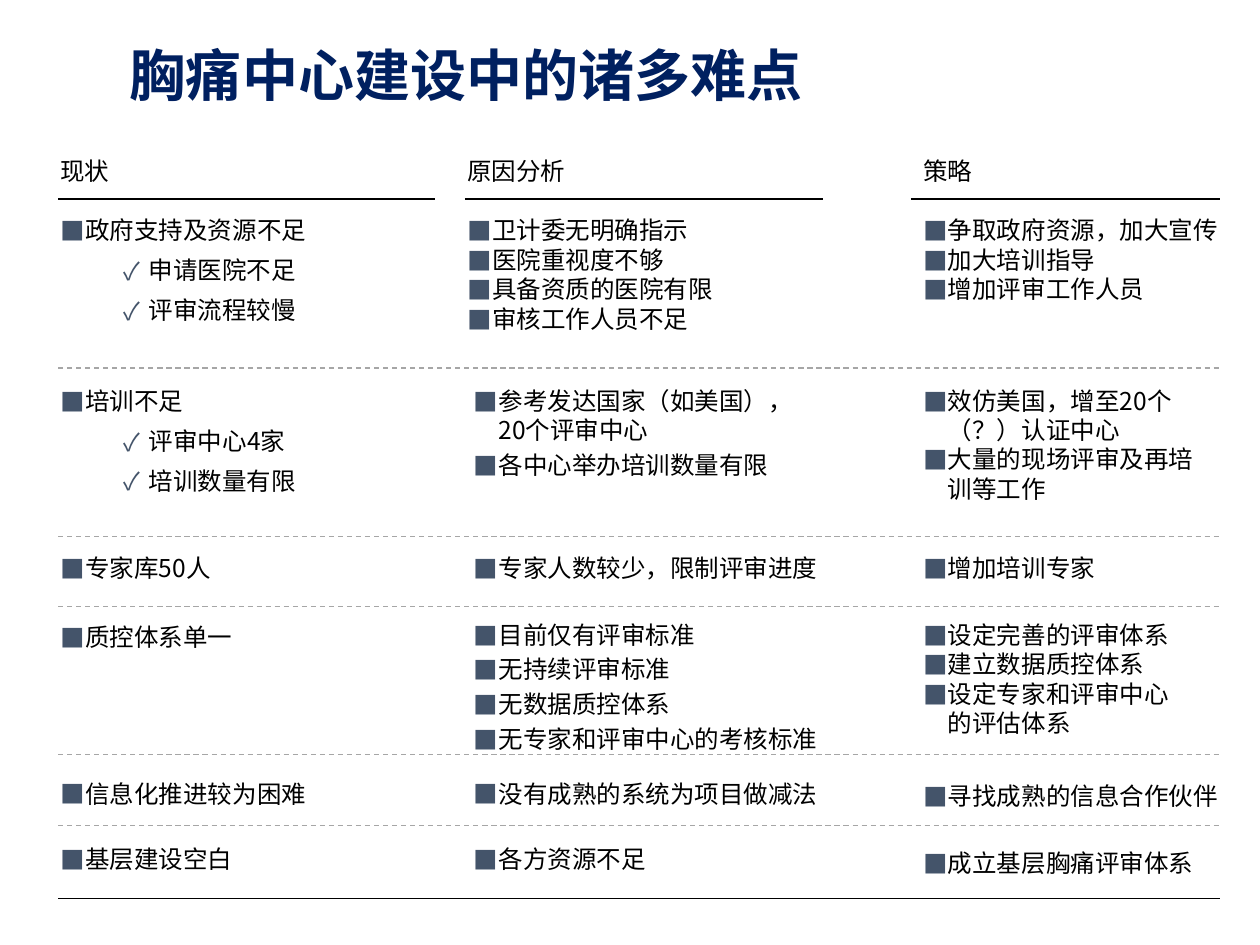
import pptx
import pptx.util
import pptx.dml.color
import pptx.enum.dml
import pptx.enum.shapes
import pptx.enum.text
import pptx.oxml.ns
import lxml.etree

Cm, Pt = pptx.util.Cm, pptx.util.Pt
FONT = "Noto Sans CJK SC"
HUES = {"title": "002060", "text": "000000", "mark": "44546A",
        "rule": "A6A6A6", "white": "FFFFFF"}
TITLE = " 胸痛中心建设中的诸多难点"

# left, width, text
HEADS = [(0.97, 5.59, "现状"), (9.17, 6.91, "原因分析"), (18.36, 5.59, "策略")]

# Each column: left, then cells of (top, width, height, space before, lines).
# A line that starts with "-" is a checked sub-item.
COLS = [
    (0.97, [
        (4.22, 5.59, 2.49, 6, ["政府支持及资源不足", "-申请医院不足", "-评审流程较慢"]),
        (7.65, 5.59, 2.49, 6, ["培训不足", "-评审中心4家", "-培训数量有限"]),
        (11.02, 5.59, 0.86, 6, ["专家库50人"]),
        (12.42, 5.59, 0.86, 6, ["质控体系单一"]),
        (15.57, 5.59, 0.86, 6, ["信息化推进较为困难"]),
        (16.89, 5.59, 0.86, 6, ["基层建设空白"]),
    ]),
    (9.17, [
        (4.22, 8.61, 3.25, 0, ["卫计委无明确指示", "医院重视度不够",
                               "具备资质的医院有限", "审核工作人员不足"]),
    ]),
    (9.3, [
        (7.65, 7.47, 2.16, 3, ["参考发达国家（如美国），20个评审中心",
                               "各中心举办培训数量有限"]),
        (11.02, 8.69, 0.86, 3, ["专家人数较少，限制评审进度"]),
        (12.37, 8.69, 2.97, 3, ["目前仅有评审标准", "无持续评审标准",
                                "无数据质控体系", "无专家和评审中心的考核标准"]),
        (15.57, 8.69, 0.86, 3, ["没有成熟的系统为项目做减法"]),
        (16.89, 8.69, 0.86, 3, ["各方资源不足"]),
    ]),
    (18.36, [
        (4.22, 7.11, 2.64, 0, ["争取政府资源，加大宣传", "加大培训指导", "增加评审工作人员"]),
        (7.65, 6.2, 2.64, 0, ["效仿美国，增至20个（？）认证中心",
                              "大量的现场评审及再培训等工作"]),
        (11.02, 8.69, 0.86, 3, ["增加培训专家"]),
        (12.37, 5.59, 2.64, 0, ["设定完善的评审体系", "建立数据质控体系",
                                "设定专家和评审中心的评估体系"]),
        (15.62, 8.69, 0.86, 3, ["寻找成熟的信息合作伙伴"]),
    ]),
]
LAST = (16.97, 6.48, 0.86, 3, ["成立基层胸痛评审体系"])

LEFT, RIGHT = 1.17, 24.59
HEAD_Y, END_Y = 4.01, 18.11
HEAD_RULES = [(LEFT, 8.76), (9.37, 16.59), (18.36, RIGHT)]
ROW_RULES = [7.42, 10.82, 12.22, 15.21, 16.64]


def tint(name):
    return pptx.dml.color.RGBColor.from_string(HUES[name])


def add_sub(node, tag, **attrs):
    return lxml.etree.SubElement(node, pptx.oxml.ns.qn(tag), **attrs)


def write(para, text, size=14, hue="text", bold=False, mark=None, indent=0.5, gap=0):
    """Fill one paragraph, with a hanging indent and an optional bullet."""
    props = para._p.get_or_add_pPr()
    props.set("marL", str(Cm(indent)))
    props.set("indent", str(-Cm(0.5) if indent else 0))
    if mark:
        add_sub(add_sub(props, "a:buClr"), "a:srgbClr", val=HUES["mark"])
        add_sub(props, "a:buFont", typeface=FONT)
        add_sub(props, "a:buChar", char=mark)
    else:
        add_sub(props, "a:buNone")
    para.alignment = pptx.enum.text.PP_ALIGN.LEFT
    para.space_before = Pt(gap)
    run = para.add_run()
    run.text = text
    font = run.font
    font.size, font.bold, font.name = Pt(size), bold, FONT
    font.color.rgb = tint(hue)
    add_sub(font._element, "a:ea", typeface=FONT)


def set_up(frame):
    frame.word_wrap = True
    frame.auto_size = pptx.enum.text.MSO_AUTO_SIZE.SHAPE_TO_FIT_TEXT
    frame.vertical_anchor = pptx.enum.text.MSO_ANCHOR.TOP
    return frame


def add_box(slide, left, top, width, height):
    box = slide.shapes.add_textbox(Cm(left), Cm(top), Cm(width), Cm(height))
    return set_up(box.text_frame)


def fill_list(frame, lines, gap):
    for i, line in enumerate(lines):
        para = frame.add_paragraph() if i else frame.paragraphs[0]
        sub = line.startswith("-")
        para.level = int(sub)
        write(para, line.lstrip("-"), mark="✓" if sub else "■",
              indent=1.78 if sub else 0.5, gap=gap if i else 0)


def add_rule(slide, start, end, y, hue="text", dash=False):
    rule = slide.shapes.add_connector(
        pptx.enum.shapes.MSO_CONNECTOR.STRAIGHT, Cm(start), Cm(y), Cm(end), Cm(y))
    rule.line.color.rgb = tint(hue)
    rule.line.width = Pt(0.75)
    if dash:
        rule.line.dash_style = pptx.enum.dml.MSO_LINE.DASH
    add_sub(rule._element.spPr, "a:effectLst")


def main():
    deck = pptx.Presentation()
    deck.slide_width, deck.slide_height = Cm(25.4), Cm(19.05)
    slide = deck.slides.add_slide(deck.slide_layouts[5])

    title = slide.shapes.title
    title.left, title.top, title.width, title.height = Cm(2.11), Cm(0.86), Cm(23.37), Cm(1.42)
    title.text_frame.vertical_anchor = pptx.enum.text.MSO_ANCHOR.MIDDLE
    para = title.text_frame.paragraphs[0]
    para.line_spacing = 0.9
    write(para, TITLE, size=32, hue="title", bold=True, indent=0)

    for left, width, text in HEADS:
        write(add_box(slide, left, 3.02, width, 0.86).paragraphs[0], text)
    for left, cells in COLS:
        for top, width, height, gap, lines in cells:
            fill_list(add_box(slide, left, top, width, height), lines, gap)

    for start, end in HEAD_RULES:
        add_rule(slide, start, end, HEAD_Y)
    for y in ROW_RULES:
        add_rule(slide, LEFT, RIGHT, y, hue="rule", dash=True)
    add_rule(slide, LEFT, RIGHT, END_Y)

    top, width, height, gap, lines = LAST
    panel = slide.shapes.add_shape(pptx.enum.shapes.MSO_SHAPE.RECTANGLE,
                                   Cm(18.36), Cm(top), Cm(width), Cm(height))
    panel.shadow.inherit = False
    panel.fill.solid()
    panel.fill.fore_color.rgb = tint("white")
    panel.line.fill.background()
    fill_list(set_up(panel.text_frame), lines, gap)

    deck.save("out.pptx")


if __name__ == "__main__":
    main()
